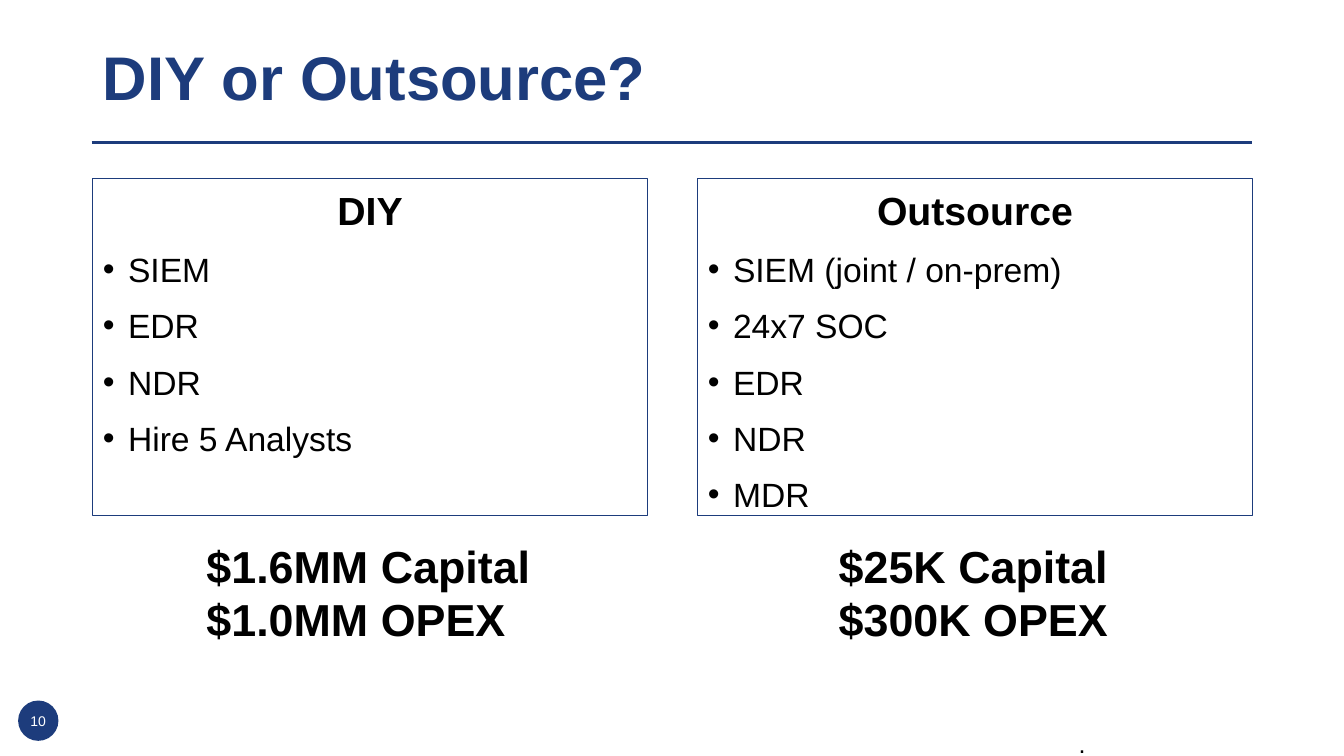
from lxml import etree
from pptx import Presentation
from pptx import util as u
from pptx.dml.color import RGBColor
from pptx.enum import shapes, text
from pptx.oxml.ns import qn

PX = 9144  # 100 px to the inch
COLORS = {"navy": "1D3C7C", "black": "000000", "white": "FFFFFF"}


def place(shape, left, top, width, height):
    shape.left, shape.top = left * PX, top * PX
    shape.width, shape.height = width * PX, height * PX


def style(paragraph, size, color="black", bold=False):
    for run in paragraph.runs:
        run.font.name = "Arial"
        run.font.size = u.Pt(size)
        run.font.bold = bold
        run.font.color.rgb = RGBColor.from_string(COLORS[color])


presentation = Presentation()
presentation.slide_width, presentation.slide_height = 1333 * PX, 750 * PX
slide = presentation.slides.add_slide(presentation.slide_layouts[3])
navy = RGBColor.from_string(COLORS["navy"])

# Title and rule
title = slide.shapes.title
place(title, 92, 15, 1058, 98)
frame = title.text_frame
frame.text = "DIY or Outsource?"
frame.auto_size = text.MSO_AUTO_SIZE.NONE
frame.vertical_anchor = text.MSO_ANCHOR.BOTTOM
frame.margin_bottom = 0
frame.paragraphs[0].alignment = text.PP_ALIGN.LEFT
frame.paragraphs[0].line_spacing = 0.9
style(frame.paragraphs[0], 44, "navy", True)

rule = slide.shapes.add_connector(
    shapes.MSO_CONNECTOR.STRAIGHT, 91 * PX, 141 * PX, 1242 * PX, 141 * PX)
rule.line.color.rgb = navy
rule.line.width = u.Pt(2)
etree.SubElement(rule.element.spPr, qn("a:effectLst"))

# Option lists
options = [
    (1, 92, ["DIY", "SIEM", "EDR", "NDR", "Hire 5 Analysts"]),
    (2, 692, ["Outsource", "SIEM (joint / on-prem)", "24x7 SOC", "EDR", "NDR", "MDR"]),
]
for index, left, lines in options:
    body = slide.placeholders[index]
    place(body, left, 177, 550, 334)
    body.line.color.rgb = navy
    body.line.width = u.Pt(0.75)
    frame = body.text_frame
    frame.text = "\n".join(lines)
    frame.auto_size = text.MSO_AUTO_SIZE.NONE
    for number, paragraph in enumerate(frame.paragraphs):
        heading = number == 0
        paragraph.space_before = u.Pt(10)
        paragraph.line_spacing = 1.05
        style(paragraph, 28 if heading else 24, bold=heading)
        properties = paragraph._p.get_or_add_pPr()
        properties.set("marL", str(0 if heading else 25 * PX))
        properties.set("indent", str(0 if heading else -25 * PX))
        if heading:
            paragraph.alignment = text.PP_ALIGN.CENTER
            etree.SubElement(properties, qn("a:buNone"))
        else:
            etree.SubElement(properties, qn("a:buChar"), char="•")

# Costs and the footer mark
notes = [
    (195, 529, 344, 118, "$1.6MM Capital\n$1.0MM OPEX", 32, True),
    (822, 529, 289, 118, "$25K Capital\n$300K OPEX", 32, True),
    (1060, 718, 255, 18, ".", 18, False),
]
for left, top, width, height, words, size, bold in notes:
    box = slide.shapes.add_textbox(0, 0, 0, 0)
    place(box, left, top, width, height)
    box.text_frame.text = words
    box.text_frame.word_wrap = not bold
    for paragraph in box.text_frame.paragraphs:
        style(paragraph, size, bold=bold)

# Page number
badge = slide.shapes.add_shape(
    shapes.MSO_SHAPE.OVAL, 18 * PX, 695 * PX, 40 * PX, 40 * PX)
badge.shadow.inherit = False
badge.fill.solid()
badge.fill.fore_color.rgb = navy
badge.line.fill.background()
frame = badge.text_frame
frame.text = "10"
frame.margin_left = frame.margin_right = frame.margin_top = frame.margin_bottom = 0
frame.vertical_anchor = text.MSO_ANCHOR.MIDDLE
frame.paragraphs[0].alignment = text.PP_ALIGN.CENTER
style(frame.paragraphs[0], 10, "white")

presentation.save("out.pptx")
